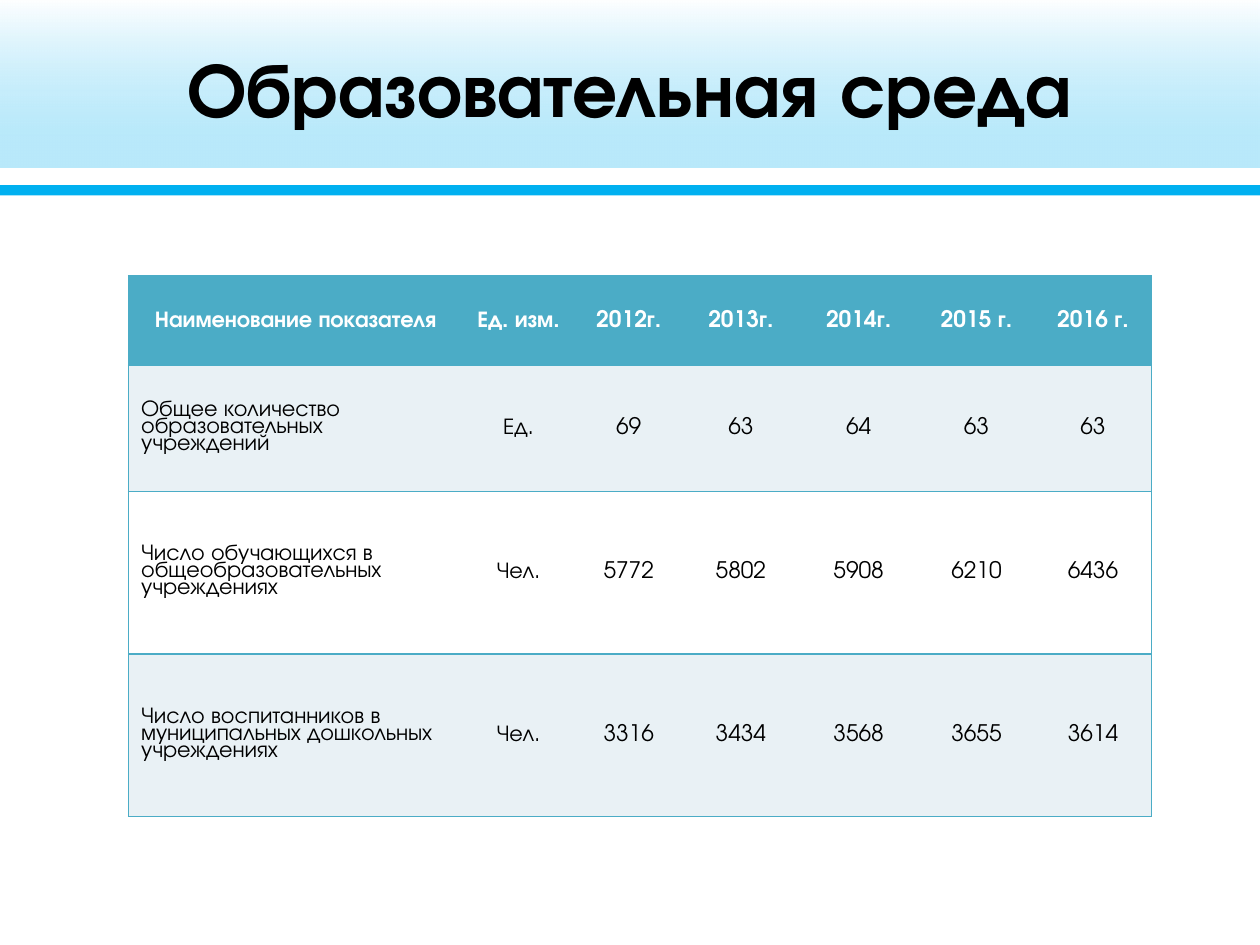
from pptx import Presentation
from pptx.dml.color import RGBColor
from pptx.enum.shapes import MSO_SHAPE
from pptx.enum.text import MSO_ANCHOR, PP_ALIGN
from pptx.oxml.ns import qn
from pptx.util import Inches, Pt
from lxml.etree import SubElement

# Content
TITLE = "Образовательная среда"
ROWS = [
    ["Наименование показателя", "Ед. изм.", "2012г.", "2013г.", "2014г.", "2015 г.", "2016 г."],
    ["Общее количество образовательных учреждений", "Ед.", "69", "63", "64", "63", "63"],
    ["Число обучающихся в общеобразовательных учреждениях", "Чел.",
     "5772", "5802", "5908", "6210", "6436"],
    ["Число воспитанников в муниципальных дошкольных учреждениях", "Чел.",
     "3316", "3434", "3568", "3655", "3614"],
]
COLUMN_WIDTHS = [2.65, 0.89, 0.86, 0.92, 0.95, 0.92, 0.93]
ROW_HEIGHTS = [0.71, 1, 1.29, 1.29]
FONT = "TeX Gyre Adventor"
COLORS = {"white": "FFFFFF", "black": "000000", "sky": "00B0F0",
          "teal": "4BACC6", "pale": "E9F1F5"}
# Bands: left, top, width, height, gradient stops (position, colour, opacity %)
BANDS = [
    (-0.02, -0.01, 10, 1.33, [(0, "white", 80), (1, "white", 23)]),
    (0, 1.47, 10.12, 0.08, None),
    (0, 0, 10.12, 1.33, [(0, "white", 46), (0.84, "sky", 27)]),
]


def rgb(name):
    return RGBColor.from_string(COLORS[name])


def write_text(frame, text, size=13, color="black", bold=False,
               align=PP_ALIGN.CENTER, line_spacing=None):
    frame.word_wrap = True
    paragraph = frame.paragraphs[0]
    paragraph.alignment = align
    paragraph.line_spacing = line_spacing
    run = paragraph.add_run()
    run.text = text
    run.font.name = FONT
    run.font.size = Pt(size)
    run.font.bold = bold
    run.font.color.rgb = rgb(color)


def add_band(slide, left, top, width, height, stops):
    shape = slide.shapes.add_shape(MSO_SHAPE.RECTANGLE, Inches(left), Inches(top),
                                   Inches(width), Inches(height))
    shape.shadow.inherit = False
    shape.line.fill.background()
    if stops is None:
        shape.fill.solid()
        shape.fill.fore_color.rgb = rgb("sky")
        return
    shape.fill.gradient()
    shape.fill.gradient_angle = 270
    for stop, (position, color, _) in zip(shape.fill.gradient_stops, stops):
        stop.position = position
        stop.color.rgb = rgb(color)
    for element, (_, _, opacity) in zip(shape.element.spPr.iter(qn("a:srgbClr")), stops):
        SubElement(element, qn("a:alpha"), val=str(opacity * 1000))


def set_borders(cell, visible):
    properties = cell._tc.get_or_add_tcPr()
    for index, side in enumerate(("lnL", "lnR", "lnT", "lnB")):
        line = properties.makeelement(qn(f"a:{side}"), {"w": str(Pt(1))})
        if side in visible:
            fill = SubElement(line, qn("a:solidFill"))
            SubElement(fill, qn("a:srgbClr"), val=COLORS["teal"])
        else:
            SubElement(line, qn("a:noFill"))
        properties.insert(index, line)


def add_indicator_table(slide):
    frame = slide.shapes.add_table(len(ROWS), len(COLUMN_WIDTHS), Inches(1.02), Inches(2.19),
                                   Inches(sum(COLUMN_WIDTHS)), Inches(sum(ROW_HEIGHTS)))
    table = frame.table
    for column, width in zip(table.columns, COLUMN_WIDTHS):
        column.width = Inches(width)
    for row, height in zip(table.rows, ROW_HEIGHTS):
        row.height = Inches(height)
    last_column = len(COLUMN_WIDTHS) - 1
    for row, texts in enumerate(ROWS):
        header = row == 0
        fill = "teal" if header else ("pale" if row % 2 else "white")
        for column, text in enumerate(texts):
            cell = table.cell(row, column)
            cell.vertical_anchor = MSO_ANCHOR.MIDDLE
            cell.fill.solid()
            cell.fill.fore_color.rgb = rgb(fill)
            label = column == 0 and not header
            write_text(cell.text_frame, text, bold=header,
                       color="white" if header else "black",
                       align=PP_ALIGN.LEFT if label else PP_ALIGN.CENTER,
                       line_spacing=0.8 if label else None)
            edges = {0: {"lnL"}, last_column: {"lnR"}}.get(column, set())
            set_borders(cell, {"lnT", "lnB"} | edges)


def main():
    presentation = Presentation()
    presentation.slide_width, presentation.slide_height = Inches(10), Inches(7.5)
    slide = presentation.slides.add_slide(presentation.slide_layouts[5])

    # Header bands, with the title in front of them
    for band in BANDS:
        add_band(slide, *band)
    title = slide.shapes.title
    slide.shapes._spTree.append(title.element)
    title.left, title.top = Inches(0.5), Inches(0.06)
    title.width, title.height = Inches(9), Inches(1.25)
    title.text_frame.vertical_anchor = MSO_ANCHOR.MIDDLE
    write_text(title.text_frame, TITLE, size=44, bold=True)

    # Indicators by year
    add_indicator_table(slide)
    presentation.save("out.pptx")


if __name__ == "__main__":
    main()
